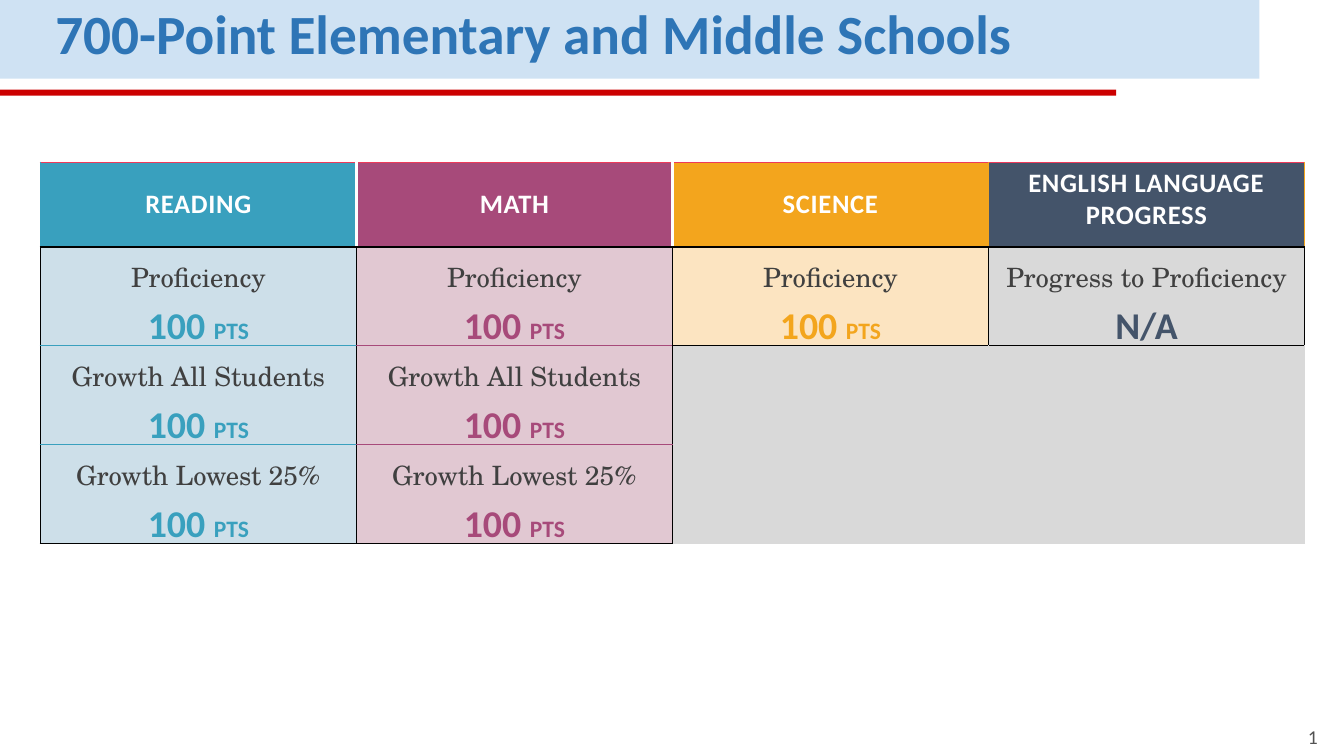
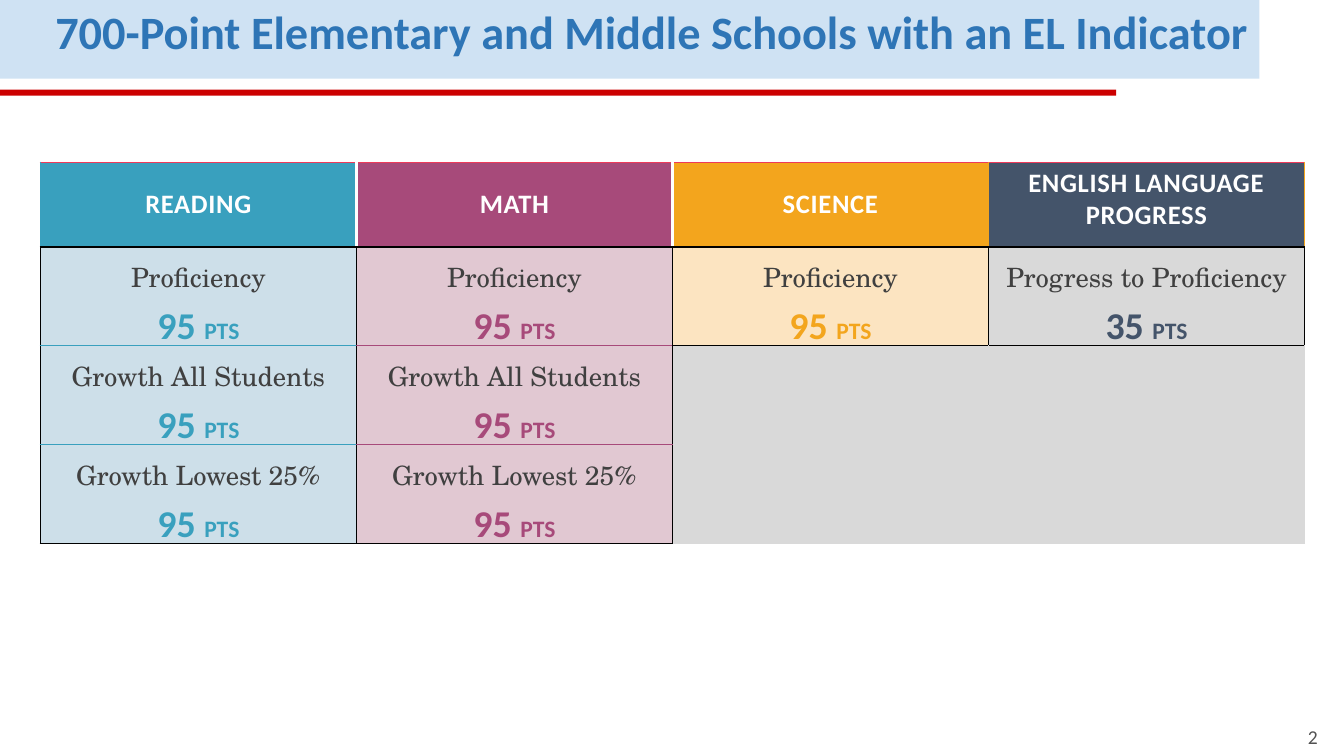
"""Build two slides of school grading tables, by subject and measure."""
from dataclasses import dataclass
from typing import Optional

from lxml.etree import SubElement
from pptx import Presentation
from pptx.dml.color import RGBColor
from pptx.enum.shapes import MSO_SHAPE
from pptx.enum.text import MSO_ANCHOR, PP_ALIGN
from pptx.oxml.ns import qn
from pptx.util import Inches, Pt


@dataclass(frozen=True)
class Theme:
    sans: str = "Calibri"
    serif: str = "TeX Gyre Schola"
    band: str = "CFE2F3"
    rule: str = "CC0000"
    title: str = "2E75B6"
    page: str = "525252"
    measure: str = "404040"
    white: str = "FFFFFF"
    black: str = "000000"
    red: str = "EE3A5A"
    gray: str = "D9D9D9"
    teal: str = "39A0BE"
    plum: str = "A74A7A"
    orange: str = "F3A51D"
    navy: str = "44546A"
    teal_tint: str = "CDDFE9"
    plum_tint: str = "E1C8D2"
    orange_tint: str = "FCE4C1"
    page_size: float = 14
    label_size: float = 19
    score_size: float = 27
    unit_size: float = 21


@dataclass(frozen=True)
class Edge:
    color: str
    width: float = 1


@dataclass(frozen=True)
class Subject:
    name: str
    accent: str
    tint: str
    measures: tuple[str, ...]


@dataclass(frozen=True)
class Scheme:
    title: str
    title_size: float
    line_spacing: float
    points: str
    progress: str


THEME = Theme()
PROGRESS = "Progress to Proficiency"
TESTED = ("Proficiency", "Growth All Students", "Growth Lowest 25%")
SUBJECTS = (
    Subject("READING", THEME.teal, THEME.teal_tint, TESTED),
    Subject("MATH", THEME.plum, THEME.plum_tint, TESTED),
    Subject("SCIENCE", THEME.orange, THEME.orange_tint, TESTED[:1]),
    Subject("ENGLISH LANGUAGE PROGRESS", THEME.navy, THEME.gray, (PROGRESS,)),
)
SCHEMES = (
    Scheme("700-Point Elementary and Middle Schools", 39.5, 0.8, "100", "N/A"),
    Scheme("700-Point Elementary and Middle Schools with an EL Indicator",
           33.1, 0.7, "95", "35"),
)
ROW_HEIGHTS = (0.84, 0.95, 0.95, 0.95)
TABLE_WIDTH = 12.54

BLACK, GRAY, RED = Edge(THEME.black), Edge(THEME.gray), Edge(THEME.red)
TEAL, PLUM, ORANGE = Edge(THEME.teal), Edge(THEME.plum), Edge(THEME.orange)
WHITE = Edge(THEME.white, 2.25)
VERTICAL_EDGES = (
    (TEAL, WHITE, WHITE, ORANGE, ORANGE),
    (BLACK,) * 5,
    (BLACK, BLACK, BLACK, GRAY, GRAY),
    (BLACK, BLACK, BLACK, None, None),
)
HORIZONTAL_EDGES = (
    (RED,) * 4,
    (BLACK,) * 4,
    (TEAL, PLUM, BLACK, BLACK),
    (TEAL, PLUM, None, None),
    (BLACK, BLACK, None, None),
)


def style_run(run, size: float, color: str, bold: bool = False,
              face: str = THEME.sans) -> None:
    """Give a run its face, size, colour and weight."""
    run.font.name = face
    run.font.size = Pt(size)
    run.font.bold = bold
    run.font.color.rgb = RGBColor.from_string(color)


def add_bar(slide, top: float, width: float, height: float, color: str) -> None:
    """Draw a plain bar from the left edge of the slide."""
    bar = slide.shapes.add_shape(MSO_SHAPE.RECTANGLE, 0, Inches(top),
                                 Inches(width), Inches(height))
    bar.shadow.inherit = False
    bar.fill.solid()
    bar.fill.fore_color.rgb = RGBColor.from_string(color)
    bar.line.fill.background()


def add_line_of_text(slide, text: str, box: tuple[float, ...], anchor):
    """Add a one-paragraph text box and return its paragraph."""
    frame = slide.shapes.add_textbox(*map(Inches, box)).text_frame
    frame.word_wrap = True
    frame.vertical_anchor = anchor
    frame.text = text
    return frame.paragraphs[0]


def add_frame(slide, scheme: Scheme, number: int) -> None:
    """Draw the title band, red rule, title and slide number."""
    add_bar(slide, 0, 12.49, 0.78, THEME.band)
    add_bar(slide, 0.89, 11.07, 0.06, THEME.rule)
    title = add_line_of_text(slide, scheme.title, (0.45, 0.05, 12.04, 0.66),
                             MSO_ANCHOR.MIDDLE)
    title.line_spacing = scheme.line_spacing
    style_run(title.runs[0], scheme.title_size, THEME.title, bold=True)
    page = add_line_of_text(slide, str(number), (12.37, 7.13, 0.8, 0.34),
                            MSO_ANCHOR.BOTTOM)
    page.alignment = PP_ALIGN.RIGHT
    style_run(page.runs[0], THEME.page_size, THEME.page)


def set_edge(cell, tag: str, edge: Optional[Edge]) -> None:
    """Draw one border of a cell, or hide it."""
    line = SubElement(cell._tc.get_or_add_tcPr(), qn(f"a:{tag}"))
    if edge is None:
        line.set("w", "0")
        SubElement(line, qn("a:noFill"))
        return
    line.set("w", str(int(Pt(edge.width))))
    fill = SubElement(line, qn("a:solidFill"))
    SubElement(fill, qn("a:srgbClr")).set("val", edge.color)


def style_cell(cell, row: int, column: int, color: str) -> None:
    """Set a cell's borders, fill and margins."""
    set_edge(cell, "lnL", VERTICAL_EDGES[row][column])
    set_edge(cell, "lnR", VERTICAL_EDGES[row][column + 1])
    set_edge(cell, "lnT", HORIZONTAL_EDGES[row][column])
    set_edge(cell, "lnB", HORIZONTAL_EDGES[row + 1][column])
    cell.fill.solid()
    cell.fill.fore_color.rgb = RGBColor.from_string(color)
    cell.margin_left = cell.margin_right = Inches(0.11)
    cell.margin_top = cell.margin_bottom = Inches(0.05)


def write_heading(cell, subject: Subject) -> None:
    """Write a subject name in the heading row."""
    cell.text_frame.text = subject.name
    if subject.measures != (PROGRESS,):
        cell.vertical_anchor = MSO_ANCHOR.MIDDLE
    heading = cell.text_frame.paragraphs[0]
    heading.alignment = PP_ALIGN.CENTER
    style_run(heading.runs[0], THEME.label_size, THEME.white, bold=True)
    heading.runs[0]._r.get_or_add_rPr().set("spc", "50")


def write_score(cell, measure: str, score: str, accent: str) -> None:
    """Write a measure with its score below."""
    has_units = score.isdigit()
    score_text = f"{score} " if has_units else score
    separator = "\n" if measure == PROGRESS else "\v"
    cell.text_frame.text = f"{measure}{separator}{score_text}"
    cell.vertical_anchor = MSO_ANCHOR.MIDDLE
    paragraphs = cell.text_frame.paragraphs
    for paragraph in paragraphs:
        paragraph.alignment = PP_ALIGN.CENTER
        paragraph.line_spacing = 1.15
        if measure != PROGRESS:
            paragraph.space_after = Pt(10)
    label, value = (run for paragraph in paragraphs for run in paragraph.runs)
    style_run(label, THEME.label_size, THEME.measure, face=THEME.serif)
    style_run(value, THEME.score_size, accent, bold=True)
    if has_units:
        unit = paragraphs[-1].add_run()
        unit.text = "pts"
        style_run(unit, THEME.unit_size, accent, bold=True)
        unit._r.get_or_add_rPr().set("cap", "small")


def add_score_table(slide, scheme: Scheme) -> None:
    """Add the table of subjects and their measures."""
    table = slide.shapes.add_table(
        len(ROW_HEIGHTS), len(SUBJECTS), Inches(0.4), Inches(1.61),
        Inches(TABLE_WIDTH), Inches(sum(ROW_HEIGHTS))).table
    table.first_row = table.horz_banding = False
    for row, height in zip(table.rows, ROW_HEIGHTS):
        row.height = Inches(height)
    for column, subject in enumerate(SUBJECTS):
        table.columns[column].width = Inches(TABLE_WIDTH / len(SUBJECTS))
        heading = table.cell(0, column)
        style_cell(heading, 0, column, subject.accent)
        write_heading(heading, subject)
        for row in range(1, len(ROW_HEIGHTS)):
            cell = table.cell(row, column)
            if row > len(subject.measures):
                style_cell(cell, row, column, THEME.gray)
                continue
            style_cell(cell, row, column, subject.tint)
            measure = subject.measures[row - 1]
            score = scheme.progress if measure == PROGRESS else scheme.points
            write_score(cell, measure, score, subject.accent)


def main() -> None:
    """Build and save the presentation."""
    presentation = Presentation()
    presentation.slide_width = Inches(13.33)
    presentation.slide_height = Inches(7.5)
    for number, scheme in enumerate(SCHEMES, start=1):
        slide = presentation.slides.add_slide(presentation.slide_layouts[6])
        add_frame(slide, scheme, number)
        add_score_table(slide, scheme)
    presentation.save("out.pptx")


if __name__ == "__main__":
    main()
